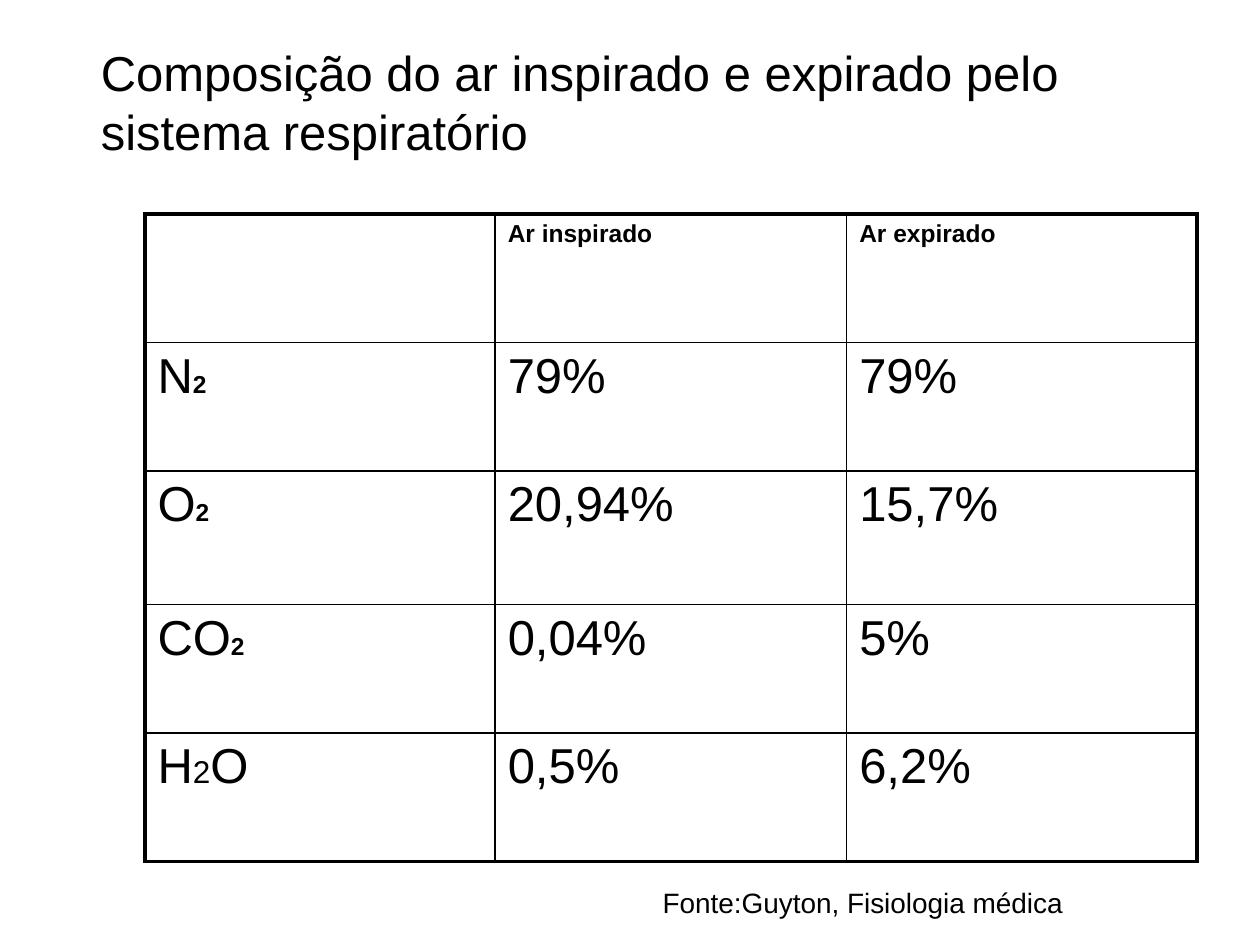
import pptx
import pptx.enum.text
import pptx.util
from lxml import etree
from pptx.dml.color import RGBColor
from pptx.oxml.ns import qn
from pptx.util import Inches

COLORS = {"ink": "000000"}
FONT = "Arial"
COLUMN_WIDTHS = [2.78, 2.79, 2.78]
ROW_HEIGHTS = [1.02, 1.02, 1.06, 1.02, 1.02]

# Each cell is a list of (text, size, bold) spans
HEADERS = ["Ar inspirado", "Ar expirado"]
GASES = [
    ([("N", 28, False), ("2", 14, True)], "79%", "79%"),
    ([("O", 28, False), ("2", 14, True)], "20,94%", "15,7%"),
    ([("CO", 28, False), ("2", 14, True)], "0,04%", "5%"),
    ([("H", 28, False), ("2", 18, False), ("O", 28, False)], "0,5%", "6,2%"),
]


def style_font(font, size, bold=False):
    font.name = FONT
    font.size = pptx.util.Pt(size)
    font.bold = bold
    font.color.rgb = RGBColor.from_string(COLORS["ink"])


def add_title(page, text):
    title = page.shapes.title
    title.left, title.top = Inches(0.4), Inches(0.29)
    title.width, title.height = Inches(9.2), Inches(0.98)
    frame = title.text_frame
    frame.text = text
    frame.word_wrap = True
    frame.auto_size = pptx.enum.text.MSO_AUTO_SIZE.NONE
    frame.vertical_anchor = pptx.enum.text.MSO_ANCHOR.TOP
    para = frame.paragraphs[0]
    para.alignment = pptx.enum.text.PP_ALIGN.LEFT
    para.space_before = pptx.util.Pt(5.8)
    properties = para._p.get_or_add_pPr()
    properties.set("marL", str(Inches(0.3)))
    properties.set("indent", "0")
    style_font(para.font, 28)


def set_border(cell, side, width):
    line = etree.SubElement(cell._tc.get_or_add_tcPr(), qn(f"a:ln{side}"),
                            w=str(pptx.util.Pt(width)))
    fill = etree.SubElement(line, qn("a:solidFill"))
    etree.SubElement(fill, qn("a:srgbClr"), val=COLORS["ink"])


def fill_cell(cell, spans):
    para = cell.text_frame.paragraphs[0]
    for text, size, bold in spans:
        span = para.add_run()
        span.text = text
        style_font(span.font, size, bold)


def add_gas_table(page):
    rows = [[[]] + [[(header, 14, True)] for header in HEADERS]]
    rows += [[gas] + [[(value, 28, False)] for value in values]
             for gas, *values in GASES]
    frame = page.shapes.add_table(len(rows), len(COLUMN_WIDTHS),
                                  Inches(1.15), Inches(1.7),
                                  Inches(sum(COLUMN_WIDTHS)),
                                  Inches(sum(ROW_HEIGHTS)))
    table = frame.table
    table.first_row = table.horz_banding = False
    for column, width in zip(table.columns, COLUMN_WIDTHS):
        column.width = Inches(width)
    for row, height in zip(table.rows, ROW_HEIGHTS):
        row.height = Inches(height)

    last_row, last_column = len(rows) - 1, len(COLUMN_WIDTHS) - 1
    for i, row in enumerate(rows):
        for j, spans in enumerate(row):
            cell = table.cell(i, j)
            fill_cell(cell, spans)
            # Thick outer frame, thin inner grid
            outer = {"L": j == 0, "R": j == last_column,
                     "T": i == 0, "B": i == last_row}
            for side, is_outer in outer.items():
                set_border(cell, side, 2.25 if is_outer else 1)
            cell.fill.background()


def add_source(page, text):
    box = page.shapes.add_textbox(Inches(5.16), Inches(6.98),
                                  Inches(4.02), Inches(0.37))
    box.text_frame.word_wrap = True
    box.text_frame.text = text
    style_font(box.text_frame.paragraphs[0].font, 16)


def main():
    deck = pptx.Presentation()
    deck.slide_width, deck.slide_height = Inches(10), Inches(7.5)
    page = deck.slides.add_slide(deck.slide_layouts[5])
    add_title(page, "Composição do ar inspirado e expirado pelo sistema respiratório")
    add_gas_table(page)
    add_source(page, "Fonte:Guyton, Fisiologia médica")
    deck.save("out.pptx")


if __name__ == "__main__":
    main()
